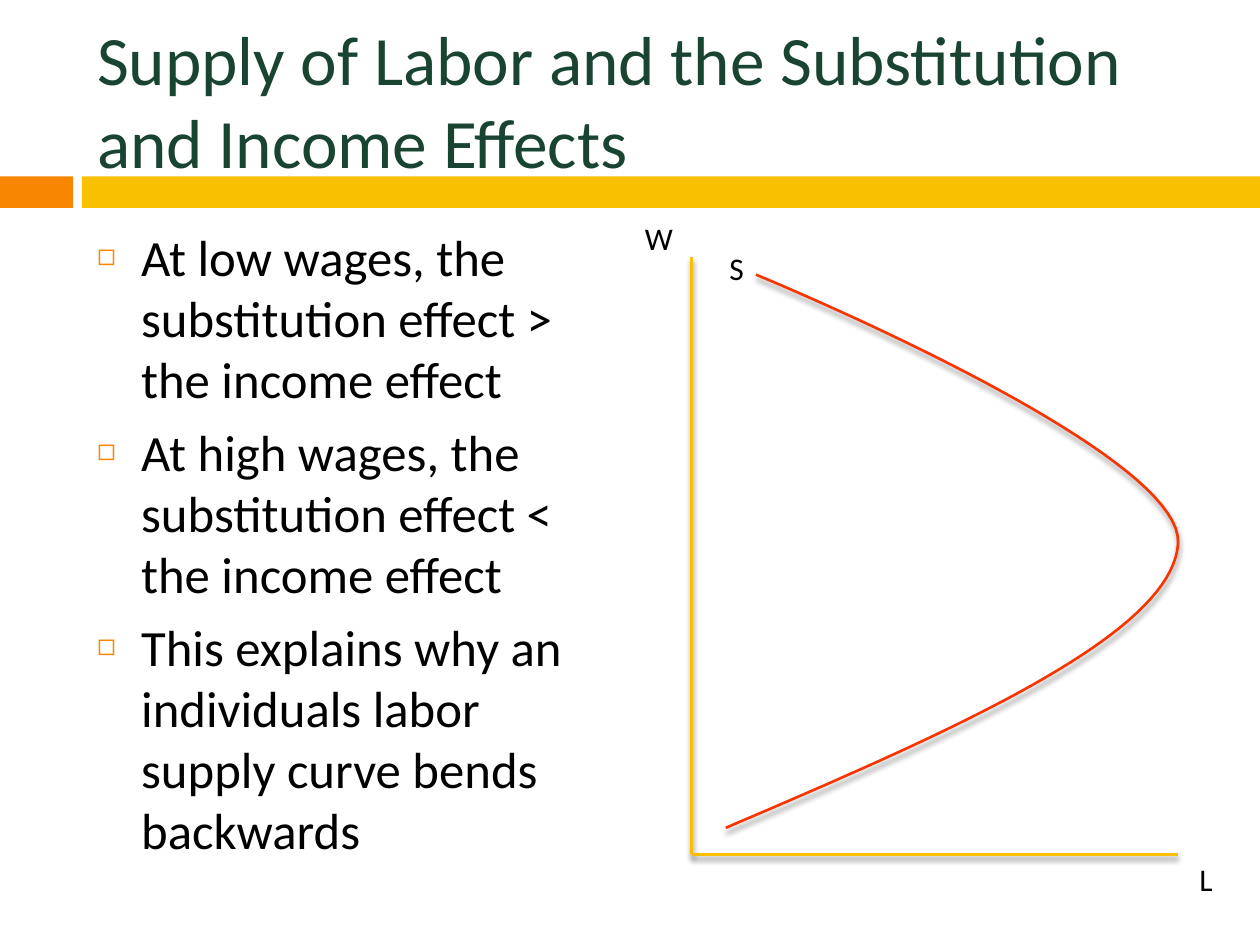
from dataclasses import dataclass

from lxml import etree
from pptx import Presentation
from pptx.dml.color import RGBColor
from pptx.enum import shapes, text
from pptx.oxml import ns
from pptx.util import Inches, Pt


@dataclass(frozen=True)
class Theme:
    font: str = "Calibri"
    title_color: str = "194431"
    ink: str = "000000"
    orange: str = "F88600"
    gold: str = "F8C000"
    red: str = "F83500"
    title_size: float = 39.6
    body_size: float = 29
    label_size: float = 18
    line_width: float = 1.5


@dataclass(frozen=True)
class Bar:
    left: float
    width: float
    color: str


@dataclass(frozen=True)
class Label:
    caption: str
    left: float
    top: float
    width: float


@dataclass(frozen=True)
class Point:
    x: float
    y: float


THEME = Theme()
BARS = [Bar(0, 0.58, THEME.orange), Bar(0.65, 9.35, THEME.gold)]
LABELS = [
    Label("S", 5.69, 1.93, 0.33),
    Label("L", 9.42, 6.78, 0.3),
    Label("W", 5.02, 1.69, 0.47),
]
BULLETS = [
    "At low wages, the substitution effect > the income effect",
    "At high wages, the substitution effect < the income effect",
    "This explains why an individuals labor supply curve bends backwards",
]
ORIGIN = Point(5.49, 6.78)
AXIS_ENDS = [Point(5.49, 2.04), Point(9.35, 6.78)]
SUPPLY = [
    [Point(5.76, 6.57), Point(7.54, 5.81), Point(9.31, 5.04), Point(9.35, 4.31)],
    [Point(9.35, 4.31), Point(9.39, 3.57), Point(6, 2.18), Point(6, 2.18)],
]
CURVE_STEPS = 40


def add_child(parent, tag: str, **attributes):
    return etree.SubElement(parent, ns.qn(tag), attributes)


def place(shape, left: float, top: float, width: float, height: float) -> None:
    shape.left, shape.top = Inches(left), Inches(top)
    shape.width, shape.height = Inches(width), Inches(height)


def style_font(para, size: float, color: str) -> None:
    para.font.name = THEME.font
    para.font.size = Pt(size)
    para.font.color.rgb = RGBColor.from_string(color)


def style_line(shape, color: str) -> None:
    shape.line.color.rgb = RGBColor.from_string(color)
    shape.line.width = Pt(THEME.line_width)
    effects = add_child(shape._element.spPr, "a:effectLst")
    shadow = add_child(effects, "a:outerShdw", blurRad=str(Pt(3)), dist=str(Pt(2.4)),
                       dir="5400000", rotWithShape="0")
    black = add_child(shadow, "a:srgbClr", val=THEME.ink)
    add_child(black, "a:alpha", val="45000")


def add_bullet(para) -> None:
    properties = para._p.get_or_add_pPr()
    properties.set("marL", str(Inches(0.35)))
    properties.set("indent", str(Inches(-0.35)))
    para.space_before = Pt(7)
    bullet_color = add_child(properties, "a:buClr")
    add_child(bullet_color, "a:srgbClr", val=THEME.orange)
    add_child(properties, "a:buSzPct", val="60000")
    add_child(properties, "a:buChar", char="◻")


def draw_bar(page, bar: Bar) -> None:
    shape = page.shapes.add_shape(shapes.MSO_SHAPE.RECTANGLE, Inches(bar.left), Inches(1.4),
                                  Inches(bar.width), Inches(0.25))
    shape.fill.solid()
    shape.fill.fore_color.rgb = RGBColor.from_string(bar.color)
    shape.line.fill.background()
    shape.shadow.inherit = False


def fill_title(box) -> None:
    place(box, 0.67, 0.25, 8.92, 1.08)
    frame = box.text_frame
    frame.text = "Supply of Labor and the Substitution and Income Effects"
    frame.auto_size = text.MSO_AUTO_SIZE.NONE
    frame.vertical_anchor = text.MSO_ANCHOR.MIDDLE
    para = frame.paragraphs[0]
    para.alignment = text.PP_ALIGN.LEFT
    style_font(para, THEME.title_size, THEME.title_color)


def fill_body(box) -> None:
    place(box, 0.67, 1.74, 4.25, 5)
    frame = box.text_frame
    frame.text = "\n".join(BULLETS)
    frame.auto_size = text.MSO_AUTO_SIZE.NONE
    for para in frame.paragraphs:
        add_bullet(para)
        style_font(para, THEME.body_size, THEME.ink)


def draw_axes(page) -> None:
    group = page.shapes.add_group_shape()
    for end in AXIS_ENDS:
        axis = group.shapes.add_connector(shapes.MSO_CONNECTOR.STRAIGHT, Inches(end.x),
                                          Inches(end.y), Inches(ORIGIN.x), Inches(ORIGIN.y))
        style_line(axis, THEME.gold)


def bezier(controls: list[Point], t: float) -> tuple[int, int]:
    weights = [(1 - t) ** 3, 3 * t * (1 - t) ** 2, 3 * t ** 2 * (1 - t), t ** 3]
    x = sum(weight * point.x for weight, point in zip(weights, controls))
    y = sum(weight * point.y for weight, point in zip(weights, controls))
    return Inches(x), Inches(y)


def draw_supply_curve(page) -> None:
    start, *rest = [bezier(controls, step / CURVE_STEPS)
                    for controls in SUPPLY for step in range(CURVE_STEPS + 1)]
    builder = page.shapes.build_freeform(*start)
    builder.add_line_segments(rest, close=False)
    curve = builder.convert_to_shape()
    curve.fill.background()
    style_line(curve, THEME.red)


def draw_label(page, label: Label) -> None:
    box = page.shapes.add_textbox(Inches(label.left), Inches(label.top),
                                  Inches(label.width), Inches(0.4))
    frame = box.text_frame
    frame.text = label.caption
    frame.word_wrap = False
    frame.auto_size = text.MSO_AUTO_SIZE.SHAPE_TO_FIT_TEXT
    style_font(frame.paragraphs[0], THEME.label_size, THEME.ink)


def main() -> None:
    deck = Presentation()
    deck.slide_width, deck.slide_height = Inches(10), Inches(7.5)
    page = deck.slides.add_slide(deck.slide_layouts[1])
    for bar in BARS:
        draw_bar(page, bar)
    fill_title(page.shapes.title)
    fill_body(page.placeholders[1])
    draw_axes(page)
    draw_supply_curve(page)
    for label in LABELS:
        draw_label(page, label)
    deck.save("out.pptx")


if __name__ == "__main__":
    main()
